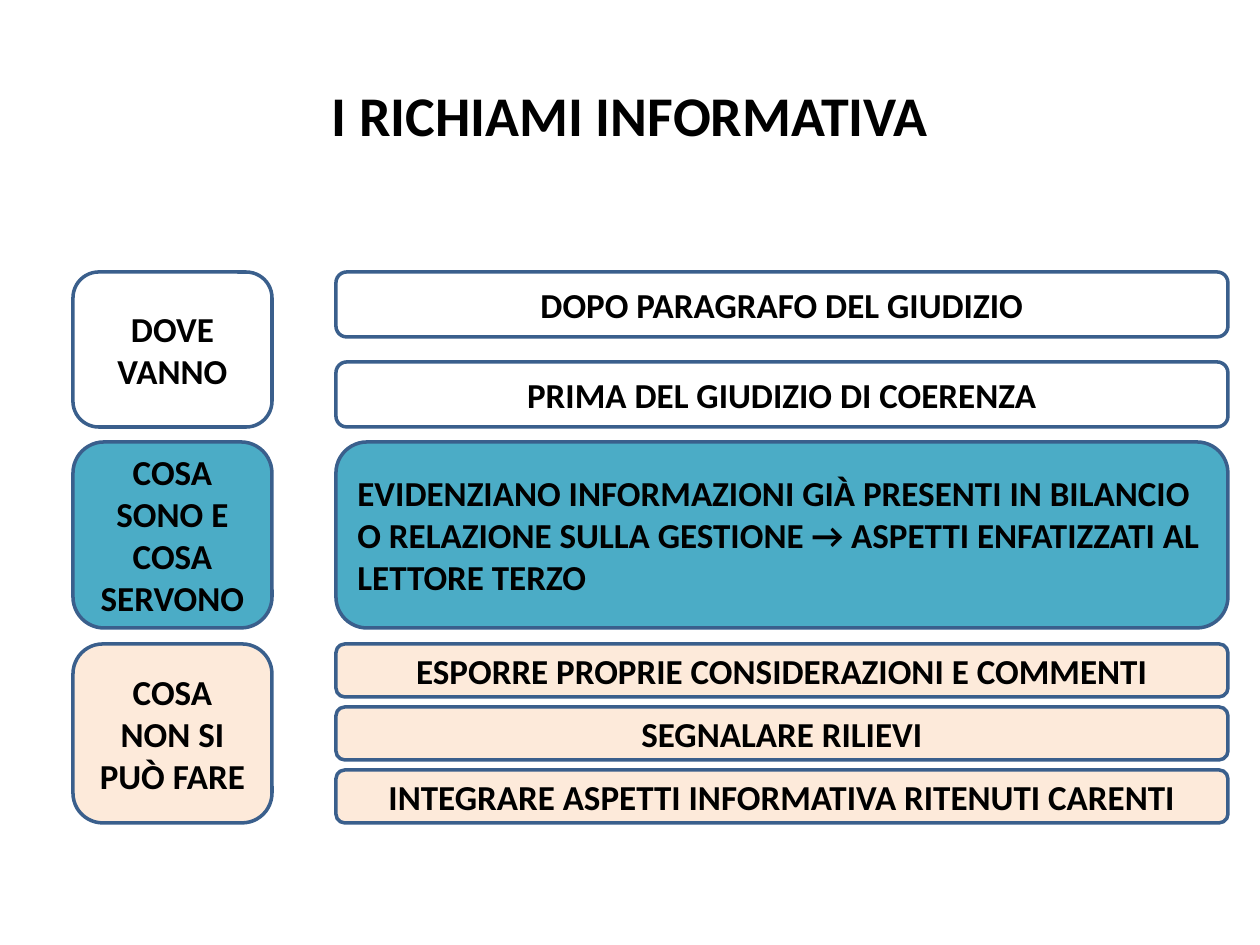
import pptx
import pptx.util
import pptx.dml.color
import pptx.enum.shapes
import pptx.enum.text
from dataclasses import dataclass

PX = 914400 / 126  # EMU per px
FONT = "Calibri"
COLORS = {
    "white": "FFFFFF",
    "teal": "4BACC6",
    "peach": "FDEADA",
    "edge": "3A5F8C",
    "ink": "000000",
}
ALIGN = pptx.enum.text.PP_ALIGN
MIDDLE = pptx.enum.text.MSO_ANCHOR.MIDDLE

# Columns: left edge and width
HEAD_X, HEAD_W = 73, 199
ITEM_X, ITEM_W = 336, 892


@dataclass
class Row:
    head: str
    items: list[str]
    top: int
    height: int
    fill: str
    gap: int = 0
    align: ALIGN = ALIGN.CENTER


ROWS = [
    Row("DOVE VANNO",
        ["DOPO PARAGRAFO DEL GIUDIZIO", "PRIMA DEL GIUDIZIO DI COERENZA"],
        272, 155, "white", gap=25),
    Row("COSA SONO E COSA SERVONO",
        ["EVIDENZIANO INFORMAZIONI GIÀ PRESENTI IN BILANCIO O RELAZIONE "
         "SULLA GESTIONE → ASPETTI ENFATIZZATI AL LETTORE TERZO"],
        442, 186, "teal", align=ALIGN.LEFT),
    Row("COSA NON SI PUÒ FARE",
        ["ESPORRE PROPRIE CONSIDERAZIONI E COMMENTI", "SEGNALARE RILIEVI",
         "INTEGRARE ASPETTI INFORMATIVA RITENUTI CARENTI"],
        644, 179, "peach", gap=10),
]


def emu(px: int) -> int:
    return round(px * PX)


def color(name: str) -> pptx.dml.color.RGBColor:
    return pptx.dml.color.RGBColor.from_string(COLORS[name])


def write(shape, text: str, size: int, align: ALIGN) -> None:
    frame = shape.text_frame
    frame.text = text
    frame.word_wrap = True
    frame.vertical_anchor = MIDDLE
    par = frame.paragraphs[0]
    par.alignment = align
    par.font.name = FONT
    par.font.size = pptx.util.Pt(size)
    par.font.bold = True
    par.font.color.rgb = color("ink")


def draw_box(slide, text: str, x: int, y: int, w: int, h: int,
             fill: str, align: ALIGN = ALIGN.CENTER) -> None:
    box = slide.shapes.add_shape(
        pptx.enum.shapes.MSO_SHAPE.ROUNDED_RECTANGLE,
        emu(x), emu(y), emu(w), emu(h))
    box.shadow.inherit = False
    box.fill.solid()
    box.fill.fore_color.rgb = color(fill)
    box.line.color.rgb = color("edge")
    box.line.width = pptx.util.Pt(2)
    write(box, text, 20, align)


def draw_row(slide, row: Row) -> None:
    draw_box(slide, row.head, HEAD_X, row.top, HEAD_W, row.height, row.fill)
    # Items share the row height equally
    count = len(row.items)
    height = (row.height - row.gap * (count - 1)) // count
    for i, text in enumerate(row.items):
        top = row.top + i * (height + row.gap)
        draw_box(slide, text, ITEM_X, top, ITEM_W, height,
                 row.fill, row.align)


def main() -> None:
    deck = pptx.Presentation()
    deck.slide_width, deck.slide_height = emu(1260), emu(945)
    slide = deck.slides.add_slide(deck.slide_layouts[5])

    # Title
    title = slide.shapes.title
    title.left, title.top = emu(0), emu(76)
    title.width, title.height = emu(1260), emu(76)
    write(title, "I RICHIAMI INFORMATIVA", 32, ALIGN.CENTER)

    # Headings with their items
    for row in ROWS:
        draw_row(slide, row)

    deck.save("out.pptx")


if __name__ == "__main__":
    main()
